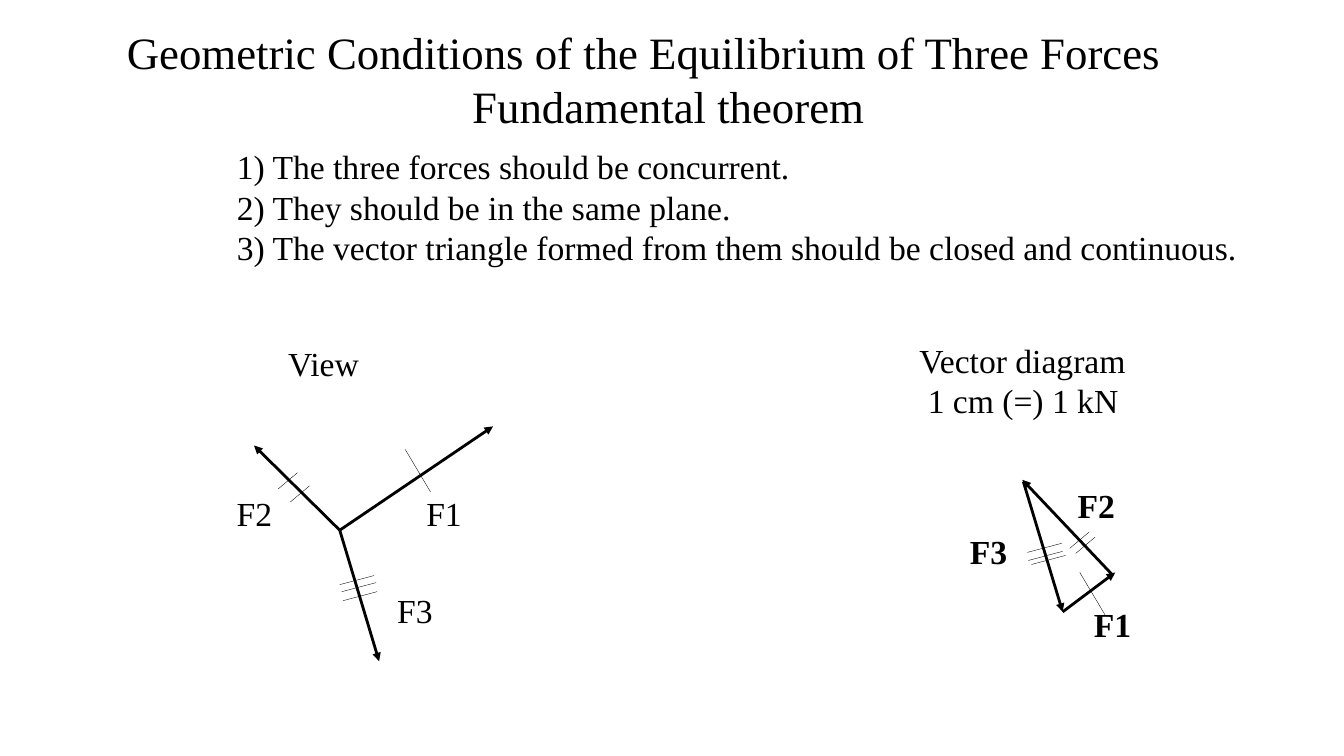
from pptx import Presentation
from pptx.dml.color import RGBColor
from pptx.enum.shapes import MSO_CONNECTOR
from pptx.enum.text import MSO_AUTO_SIZE, PP_ALIGN
from pptx.oxml.ns import qn
from pptx.util import Inches, Pt
from lxml import etree

BLACK = RGBColor(0x00, 0x00, 0x00)
LEFT, CENTER = PP_ALIGN.LEFT, PP_ALIGN.CENTER
STRAIGHT = MSO_CONNECTOR.STRAIGHT
GROW = MSO_AUTO_SIZE.SHAPE_TO_FIT_TEXT


class ForceSlide:
    font = "Times New Roman"
    force_width, tick_width = 2, 0.25

    def __init__(self, prs):
        self.s = prs.slides.add_slide(prs.slide_layouts[6])

    def text(self, x, y, w, h, lines, size=24, bold=False, aligns=()):
        box = self.s.shapes.add_textbox(Inches(x), Inches(y), Inches(w), Inches(h))
        tf = box.text_frame
        tf.word_wrap = True
        tf.auto_size = GROW
        style = {"name": self.font, "size": Pt(size), "bold": bold}
        for i, line in enumerate(lines):
            p = tf.add_paragraph() if i else tf.paragraphs[0]
            p.alignment = aligns[i] if aligns else LEFT
            r = p.add_run()
            r.text = line
            for key, value in style.items():
                setattr(r.font, key, value)
            r.font.color.rgb = BLACK

    def line(self, start, end, width):
        c = self.s.shapes.add_connector(STRAIGHT, *map(Inches, start + end))
        c.line.color.rgb = BLACK
        c.line.width = Pt(width)
        sp_pr = c._element.spPr
        etree.SubElement(sp_pr, qn("a:effectLst"))
        return sp_pr.find(qn("a:ln"))

    def force(self, start, end):
        ln = self.line(start, end, self.force_width)
        etree.SubElement(ln, qn("a:tailEnd"), type="triangle")

    def ticks(self, starts, dx, dy):
        for x, y in starts:
            self.line((x, y), (x + dx, y + dy), self.tick_width)


def main():
    prs = Presentation()
    prs.slide_width, prs.slide_height = Inches(13.33), Inches(7.5)
    slide = ForceSlide(prs)

    # Title and conditions
    slide.text(1.16, 0.2, 10.94, 1.18,
               ["Geometric Conditions of the Equilibrium of Three Forces",
                "Fundamental theorem"], size=32, aligns=(LEFT, CENTER))
    slide.text(2.25, 1.4, 10.32, 1.72,
               ["1) The three forces should be concurrent.",
                "2) They should be in the same plane.",
                "3) The vector triangle formed from them should be closed and continuous."])

    # Diagram headings
    slide.text(2.76, 3.35, 2.13, 0.5, ["View"])
    slide.text(9.02, 3.32, 2.75, 0.91, ["Vector diagram", " 1 cm (=) 1 kN"])

    # View: three forces from one point
    origin = (3.37, 5.26)
    for tip in [(4.89, 4.23), (2.52, 4.42), (3.76, 6.56)]:
        slide.force(origin, tip)

    # Vector diagram: closed triangle
    for start, end in [((11.04, 5.71), (10.14, 4.76)),
                       ((10.15, 4.78), (10.54, 6.07)),
                       ((10.54, 6.07), (11.06, 5.68))]:
        slide.force(start, end)

    # Force names: view position, triangle position, width
    for name, view, triangle, w in [("F1", (4.13, 4.84), (10.75, 5.94), 0.76),
                                    ("F2", (2.25, 4.84), (10.59, 4.76), 0.7),
                                    ("F3", (3.84, 5.8), (9.52, 5.22), 0.88)]:
        slide.text(*view, w, 0.5, [name])
        slide.text(*triangle, w, 0.5, [name], bold=True)

    # Tick marks: one for F1, two for F2, three for F3 in each diagram
    slide.ticks([(4.02, 4.46), (10.71, 5.68)], 0.25, 0.42)
    slide.ticks([(2.95, 4.69), (3.07, 4.82), (10.8, 5.28), (10.86, 5.33)], -0.19, 0.16)
    slide.ticks([(3.37, 5.8), (3.39, 5.87), (3.4, 5.96),
                 (10.19, 5.48), (10.2, 5.56), (10.23, 5.6)], 0.34, -0.09)

    prs.save("out.pptx")


if __name__ == "__main__":
    main()
